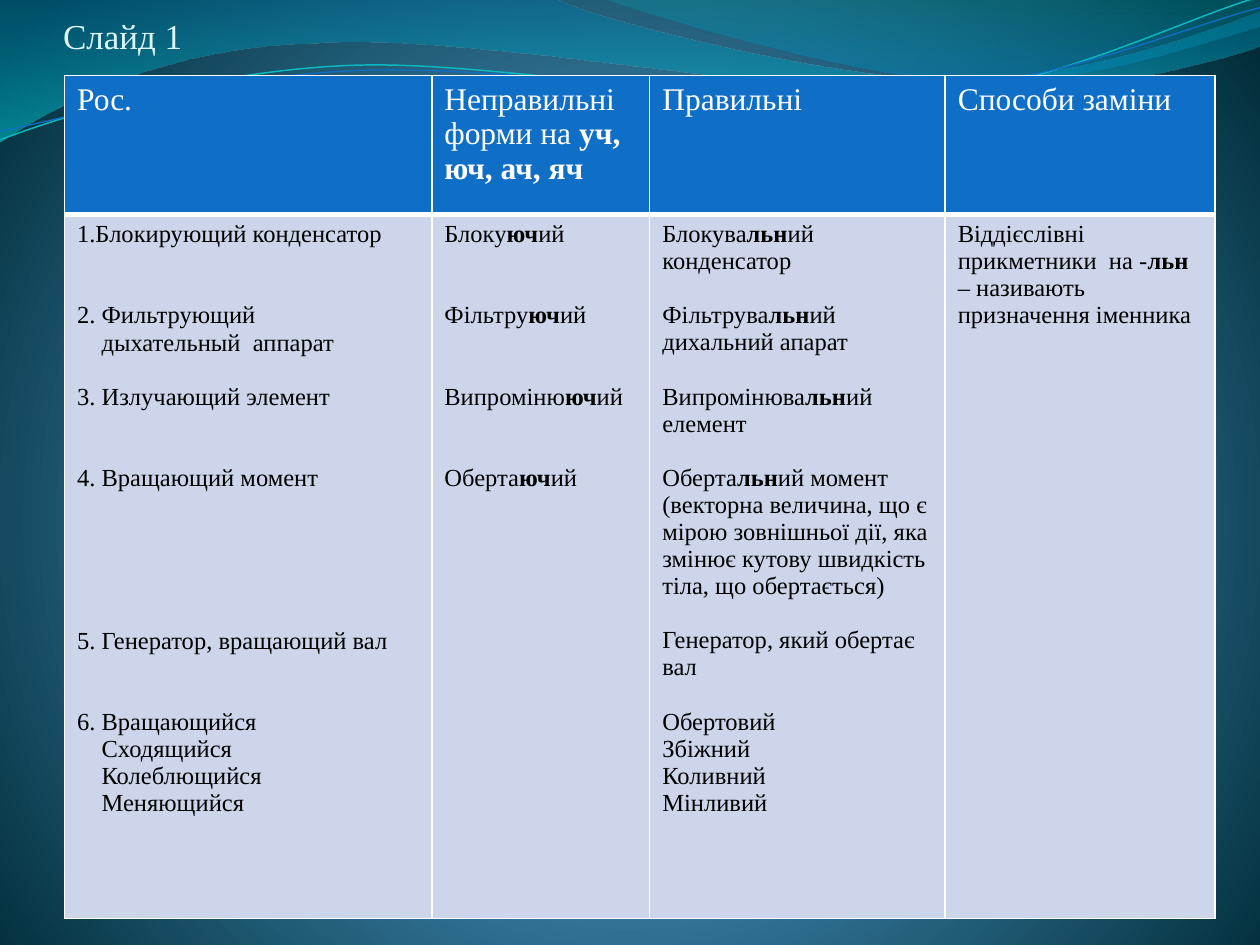
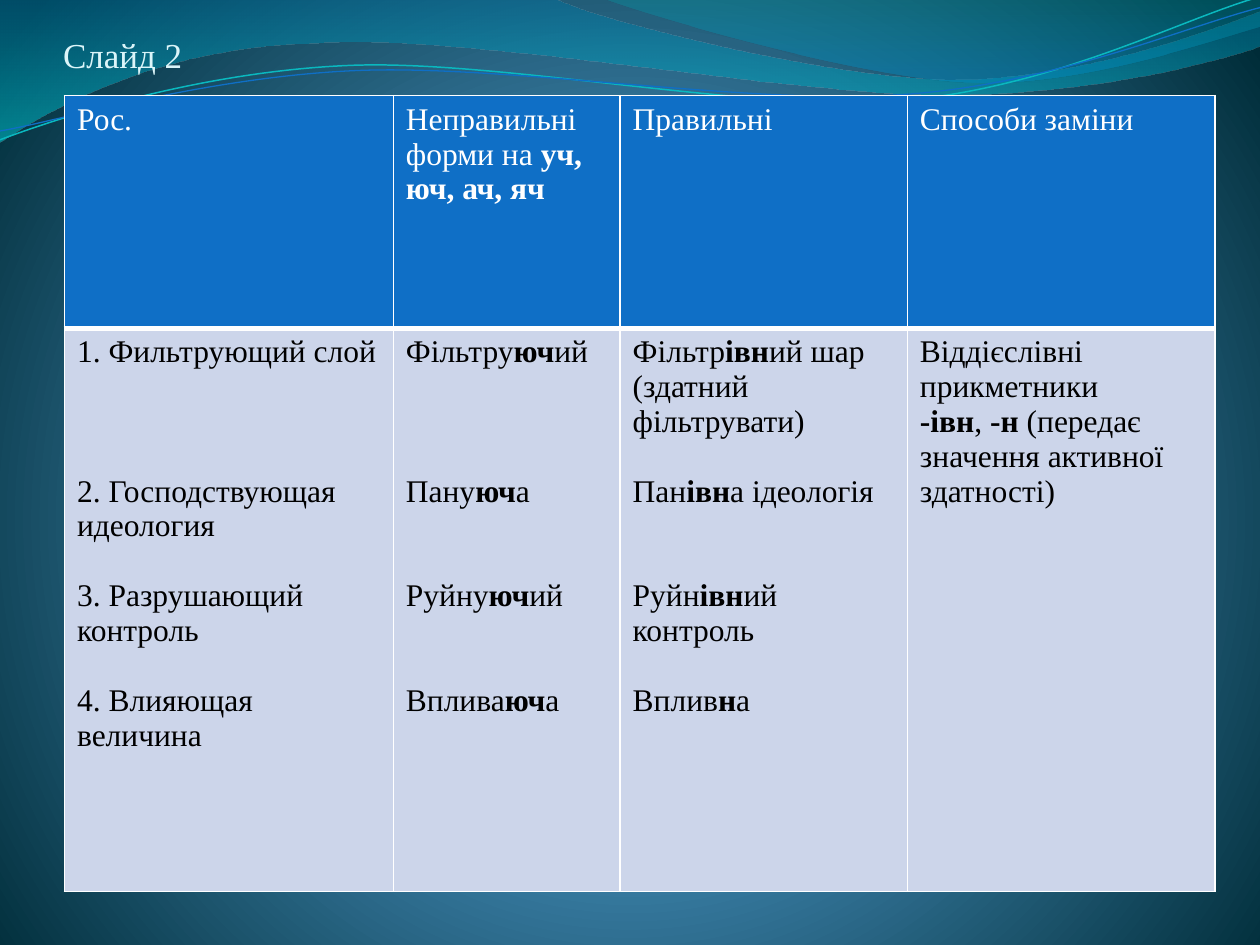
from collections import namedtuple
from math import cos, radians, sin

from pptx import Presentation
from pptx.dml.color import RGBColor as RGB
from pptx.enum.text import MSO_ANCHOR, MSO_AUTO_SIZE, PP_ALIGN
from pptx.oxml import parse_xml
from pptx.oxml.ns import nsdecls, qn
from pptx.util import Inches, Pt

W, H = Inches(10), Inches(7.5)
GRID = W / 10  # unit of the wave coordinates
LEFT = 5.12    # left edge of the tables, % of the width
TILT = -2.7    # rotation of the strands, degrees
FONT = "Times New Roman"
LINE_HEIGHT = 1.107  # line pitch of the font, in ems
COLORS = {
    "title": "DBF5F9", "header": "0F6FC6", "body": "CCD5EA",
    "white": "FFFFFF", "black": "000000", "teal": "0AB8BF", "blue": "0F6FC6",
}
BACKGROUND = [(0, "4AA0D6", 100), (25, "4C98C7", 100), (100, "002C38", 100)]

# Each wave starts with its box (left, top, width, height).
# A point is (x, y); a cubic curve is (x1, y1, x2, y2, x, y).
BANDS = [
    ((-0.01, -0.01, 10.02, 1.14),
     [(0, 0), (4.4, -0.01), (4.76, 0.17, 6.64, 0.63, 7.58, 0.63),
      (8.53, 0.63, 9.58, 0.26, 10, 0.09), (10.01, 0.36),
      (9.83, 0.44, 8.7, 0.76, 7.46, 0.75), (6.22, 0.75, 3.82, 0.28, 2.57, 0.34),
      (1.29, 0.36, 0.46, 0.83, -0.01, 1.13), (0, 0)],
     [(0, "0074A1", 45), (100, "00C6CF", 55)]),
    ((4.79, -0.01, 5.21, 0.7),
     [(4.79, -0.01), (5.09, 0.11, 6.82, 0.62, 7.69, 0.65),
      (8.56, 0.69, 9.61, 0.32, 10, 0.21), (10, 0), (4.79, -0.01)],
     [(0, "00A1A9", 30), (80, "008BBF", 45)]),
]
STRANDS = [
    ((-0.02, 0.22, 10.02, 0.71),
     [(0, 1.11), (0.48, 0.93, 1.58, 0.57, 2.77, 0.52),
      (3.95, 0.47, 5.93, 0.89, 7.13, 0.8), (8.33, 0.71, 9.38, 0.15, 9.98, -0.02)],
     "teal", 0.85),
    ((-0.02, 0.3, 10.03, 0.58),
     [(0, 1.04), (0.47, 0.96, 1.64, 0.61, 2.83, 0.56),
      (4.03, 0.51, 5.97, 0.84, 7.17, 0.75), (8.36, 0.67, 9.41, 0.21, 10, 0.06)],
     "blue", 0.75),
]

# gap is counted in lines above the paragraph, indent in points; *stars* mark bold.
Para = namedtuple("Para", "text gap indent", defaults=(0, 0))
HEADERS = ["Рос.", "Неправильні форми на *уч, юч, ач, яч*", "Правильні", "Способи заміни"]
SLIDES = [
    {"title": "Слайд 1", "title_bottom": 5.93, "top": 8, "size": 14,
     "cols": [29.15, 17.3, 23.45, 21.4], "rows": [14.7, 74.5],
     "body": [
         [Para("1.Блокирующий конденсатор"), Para("2. Фильтрующий", 2),
          Para("дыхательный  аппарат", 0, 14), Para("3. Излучающий элемент", 1),
          Para("4. Вращающий момент", 2), Para("5. Генератор, вращающий вал", 5),
          Para("6. Вращающийся", 2), Para("Сходящийся", 0, 14),
          Para("Колеблющийся", 0, 14), Para("Меняющийся", 0, 14)],
         [Para("Блоку*юч*ий"), Para("Фільтру*юч*ий", 2),
          Para("Випроміню*юч*ий", 2), Para("Оберта*юч*ий", 2)],
         [Para("Блокува*льн*ий конденсатор"), Para("Фільтрува*льн*ий", 1),
          Para("дихальний апарат"), Para("Випромінюва*льн*ий елемент", 1),
          Para("Оберта*льн*ий момент (векторна величина, що є мірою зовнішньої дії, "
               "яка змінює кутову швидкість тіла, що обертається)", 1),
          Para("Генератор, який обертає вал", 1), Para("Обертовий", 1),
          Para("Збіжний"), Para("Коливний"), Para("Мінливий")],
         [Para("Віддієслівні прикметники  на -*льн *– називають призначення іменника")],
     ]},
    {"title": "Слайд 2", "title_bottom": 8, "top": 10.13, "size": 18,
     "cols": [26.1, 18, 22.8, 24.4], "rows": [24.6, 59.6],
     "body": [
         [Para("1. Фильтрующий слой"), Para("2. Господствующая  идеология", 3),
          Para("3. Разрушающий контроль", 1), Para("4. Влияющая величина", 1)],
         [Para("Фільтру*юч*ий"), Para("Пану*юч*а", 3),
          Para("Руйну*юч*ий", 2), Para("Вплива*юч*а", 2)],
         [Para("Фільтр*івн*ий шар (здатний фільтрувати)"), Para("Пан*івн*а ідеологія", 1),
          Para("Руйн*івн*ий контроль", 2), Para("Вплив*н*а", 1)],
         [Para("Віддієслівні прикметники"),
          Para("*-івн*,* -н *(передає значення активної здатності)")],
     ]},
]


def across(pct):
    return int(W * pct / 100)


def down(pct):
    return int(H * pct / 100)


def rgb(name):
    return RGB.from_string(COLORS[name])


def gradient(stops, direction):
    """Return a gradFill element; stops are (position, colour, opacity) in %."""
    gs = "".join(
        f'<a:gs pos="{pos * 1000}"><a:srgbClr val="{color}">'
        f'<a:alpha val="{alpha * 1000}"/></a:srgbClr></a:gs>'
        for pos, color, alpha in stops)
    return parse_xml(f'<a:gradFill {nsdecls("a")} rotWithShape="1">'
                     f'<a:gsLst>{gs}</a:gsLst>{direction}</a:gradFill>')


def set_background(master):
    master.background.fill.solid()
    bg = master.element.find(".//" + qn("p:bgPr"))
    bg.replace(bg[0], gradient(BACKGROUND, '<a:path path="circle"><a:fillToRect l="10000" '
                               't="110000" r="10000" b="100000"/></a:path>'))


def local_point(x, y, box, tilt):
    """Turn a slide point into EMU inside a box that is tilted about its centre."""
    left, top, width, height = box
    dx, dy, a = x - left - width / 2, y - top - height / 2, radians(-tilt)
    return (round((dx * cos(a) - dy * sin(a) + width / 2) * GRID),
            round((dx * sin(a) + dy * cos(a) + height / 2) * GRID))


def add_outline(s, box, outline, tilt=0):
    """Add a freeform and bend the segments that are given as cubic curves."""
    parts = [[local_point(x, y, box, tilt) for x, y in zip(part[::2], part[1::2])]
             for part in outline]
    builder = s.shapes.build_freeform(*parts[0][-1])
    builder.add_line_segments([part[-1] for part in parts[1:]], close=False)
    sp = builder.convert_to_shape()
    left, top, width, height = (round(v * GRID) for v in box)
    frame = {"left": left, "top": top, "width": width, "height": height, "rotation": tilt}
    for name, value in frame.items():
        setattr(sp, name, value)
    route = sp.element.find(".//" + qn("a:pathLst"))[0]
    route.set("w", str(width))
    route.set("h", str(height))
    for i, part in enumerate(parts):
        tag = "moveTo" if i == 0 else "lnTo" if len(part) == 1 else "cubicBezTo"
        pts = "".join(f'<a:pt x="{x}" y="{y}"/>' for x, y in part)
        route.replace(route[i], parse_xml(f'<a:{tag} {nsdecls("a")}>{pts}</a:{tag}>'))
    sp.shadow.inherit = False
    return sp


def add_waves(s, master):
    """Draw the waves on a slide and hand them over to the master."""
    waves = []
    for box, outline, stops in BANDS:
        sp = add_outline(s, box, outline)
        sp.line.fill.background()
        sp.element.spPr.insert(2, gradient(stops, '<a:lin ang="5400000" scaled="0"/>'))
        waves.append(sp)
    for box, outline, color, width in STRANDS:
        sp = add_outline(s, box, outline, TILT)
        sp.fill.background()
        sp.line.color.rgb = rgb(color)
        sp.line.width = Pt(width)
        waves.append(sp)
    anchor = master.placeholders[0].element
    for number, sp in enumerate(waves, 20):
        sp.element.nvSpPr.cNvPr.set("id", str(number))
        anchor.addprevious(sp.element)


def add_run(p, text, size, color, bold=False):
    r = p.add_run()
    r.text = text
    for name, value in {"name": FONT, "size": Pt(size), "bold": bold}.items():
        setattr(r.font, name, value)
    r.font.color.rgb = rgb(color)


def set_title(s, text, bottom):
    title = s.shapes.title
    box = {"left": across(5), "top": 0, "width": across(90), "height": down(bottom)}
    for name, value in box.items():
        setattr(title, name, value)
    tf = title.text_frame
    frame = {"margin_left": 0, "margin_right": 0, "margin_bottom": 0, "word_wrap": True,
             "vertical_anchor": MSO_ANCHOR.BOTTOM, "auto_size": MSO_AUTO_SIZE.NONE}
    for name, value in frame.items():
        setattr(tf, name, value)
    p = tf.paragraphs[0]
    p.alignment = PP_ALIGN.LEFT
    add_run(p, text, 20, "title")


def set_borders(cell, widths):
    tcPr = cell._tc.get_or_add_tcPr()
    for i, (side, width) in enumerate(zip("LRTB", widths)):
        tcPr.insert(i, parse_xml(
            f'<a:ln{side} {nsdecls("a")} w="{Pt(width)}"><a:solidFill>'
            f'<a:srgbClr val="{COLORS["white"]}"/></a:solidFill></a:ln{side}>'))


def fill_cell(cell, paras, size, color, fill, borders):
    cell.fill.solid()
    cell.fill.fore_color.rgb = rgb(fill)
    set_borders(cell, borders)
    tf = cell.text_frame
    for i, para in enumerate(paras):
        p = tf.add_paragraph() if i else tf.paragraphs[0]
        p.space_before = Pt(para.gap * size * LINE_HEIGHT)
        if para.indent:
            p._p.get_or_add_pPr().set("marL", str(Pt(para.indent)))
        for j, part in enumerate(para.text.split("*")):
            if part:
                add_run(p, part, size, color, bold=j % 2 == 1)


def add_word_table(s, top, cols, rows, body, size):
    table = s.shapes.add_table(2, len(cols), across(LEFT), down(top),
                               across(sum(cols)), down(sum(rows))).table
    table.first_row = table.horz_banding = False
    for row, height in zip(table.rows, rows):
        row.height = down(height)
    for c, (width, header, paras) in enumerate(zip(cols, HEADERS, body)):
        table.columns[c].width = across(width)
        fill_cell(table.cell(0, c), [Para(header)], 18, "white", "header", (1, 1, 1, 3))
        fill_cell(table.cell(1, c), paras, size, "black", "body", (1, 1, 3, 1))


def main():
    prs = Presentation()
    prs.slide_width, prs.slide_height = W, H
    master = prs.slide_master
    set_background(master)
    for i, d in enumerate(SLIDES):
        s = prs.slides.add_slide(prs.slide_layouts[5])
        if i == 0:
            add_waves(s, master)
        set_title(s, d["title"], d["title_bottom"])
        add_word_table(s, d["top"], d["cols"], d["rows"], d["body"], d["size"])
    prs.save("out.pptx")


if __name__ == "__main__":
    main()
